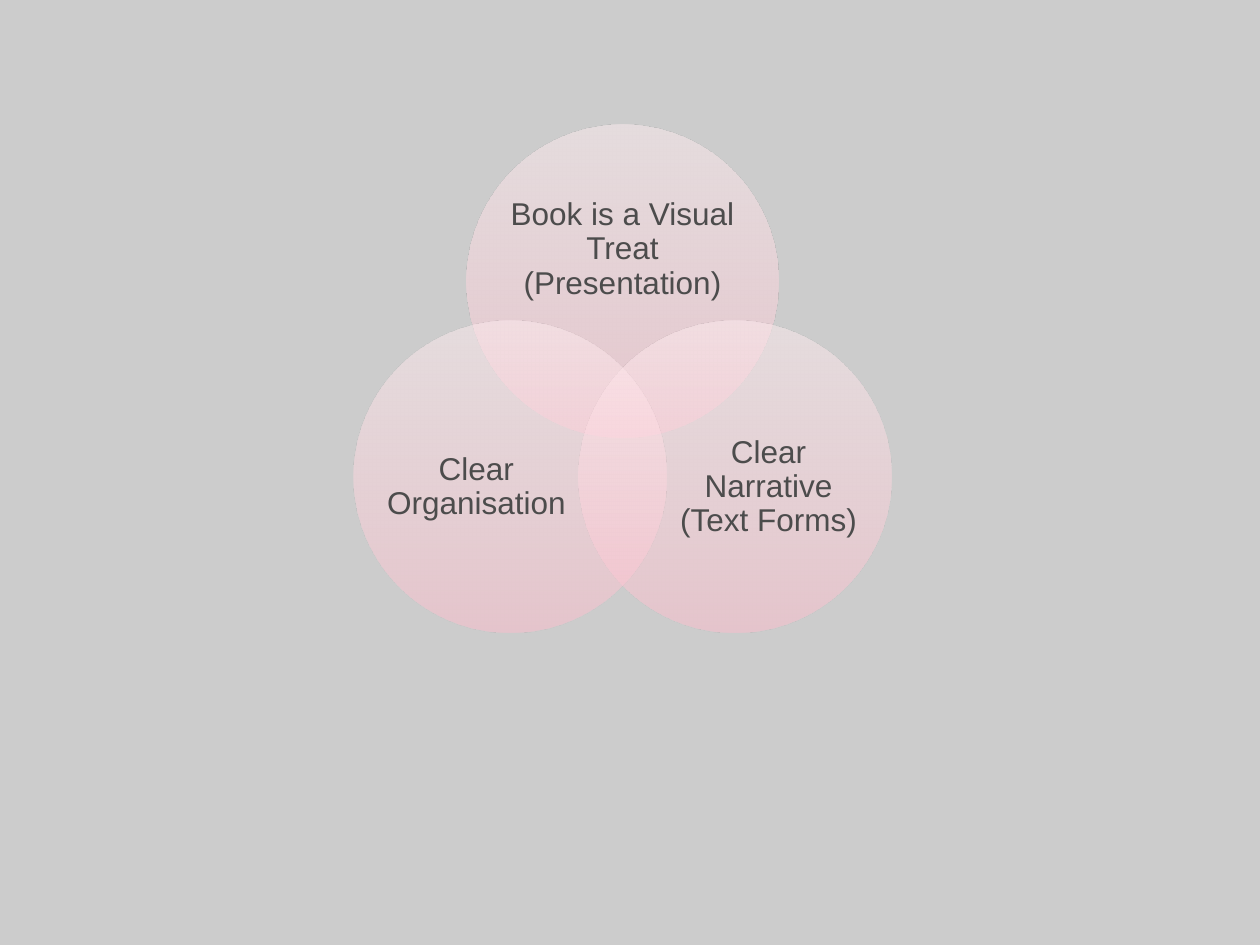
from math import cos, radians, sin

from lxml import etree
from pptx import Presentation
from pptx import util as u
from pptx.dml.color import RGBColor
from pptx.enum import shapes, text
from pptx.oxml.ns import qn

GREY = RGBColor(0xCC, 0xCC, 0xCC)
INK = RGBColor(0x4C, 0x4C, 0x4C)
ROSE = RGBColor(0xFF, 0xBD, 0xCD)
PINK = RGBColor(0xFF, 0xD1, 0xDB)
PALE = RGBColor(0xFF, 0xEE, 0xF1)

STOPS = [(0, ROSE), (35, PINK), (100, PALE)]
ALPHA = 50
COLS, ROWS = 100, 75
MID = (49.4, 32.65)
ORBIT = 10.33
SIZE = 24.8

RINGS = [
    (-90, "Book is a Visual Treat (Presentation)", (0, -2.5), (18.2, 11.2)),
    (30, "Clear Narrative (Text Forms)", (2.65, 0.85), (14.9, 13.7)),
    (150, "Clear Organisation", (-2.65, 0.85), (14.9, 13.7)),
]


class Deck:
    font = {"name": "Arial", "size": u.Pt(18)}
    frame = {
        "word_wrap": True,
        "vertical_anchor": text.MSO_ANCHOR.MIDDLE,
        "margin_left": 0,
        "margin_right": 0,
        "margin_top": 0,
        "margin_bottom": 0,
    }
    para = {"alignment": text.PP_ALIGN.CENTER, "line_spacing": 0.9}

    def __init__(self):
        self.prs = Presentation()
        self.prs.slide_width = u.Inches(10)
        self.prs.slide_height = u.Inches(7.5)
        self.slide = self.prs.slides.add_slide(self.prs.slide_layouts[6])
        fill = self.slide.background.fill
        fill.solid()
        fill.fore_color.rgb = GREY

    def apply(self, item, form):
        for key, val in form.items():
            setattr(item, key, val)

    def box(self, x, y, wide, high):
        col = self.prs.slide_width / COLS
        row = self.prs.slide_height / ROWS
        return [
            round(v)
            for v in ((x - wide / 2) * col, (y - high / 2) * row, wide * col, high * row)
        ]

    def disc(self, x, y, size):
        disc = self.slide.shapes.add_shape(
            shapes.MSO_SHAPE.OVAL, *self.box(x, y, size, size)
        )
        disc.shadow.inherit = False
        disc.line.fill.background()
        disc.fill.gradient()
        disc.fill.gradient_angle = 90
        stops = disc.element.spPr.find(".//" + qn("a:gsLst"))
        for old in list(stops):
            stops.remove(old)
        for pos, tint in STOPS:
            stop = etree.SubElement(stops, qn("a:gs"), pos=str(pos * 1000))
            hue = etree.SubElement(stop, qn("a:srgbClr"), val=str(tint))
            etree.SubElement(hue, qn("a:alpha"), val=str(ALPHA * 1000))

    def label(self, words, x, y, wide, high):
        frame = self.slide.shapes.add_textbox(*self.box(x, y, wide, high)).text_frame
        self.apply(frame, self.frame)
        para = frame.paragraphs[0]
        para.text = words
        self.apply(para, self.para)
        self.apply(para.font, self.font)
        para.font.color.rgb = INK


def main():
    deck = Deck()
    for angle, words, (right, down), area in RINGS:
        x = MID[0] + ORBIT * cos(radians(angle))
        y = MID[1] + ORBIT * sin(radians(angle))
        deck.disc(x, y, SIZE)
        deck.label(words, x + right, y + down, *area)
    deck.prs.save("out.pptx")


if __name__ == "__main__":
    main()
